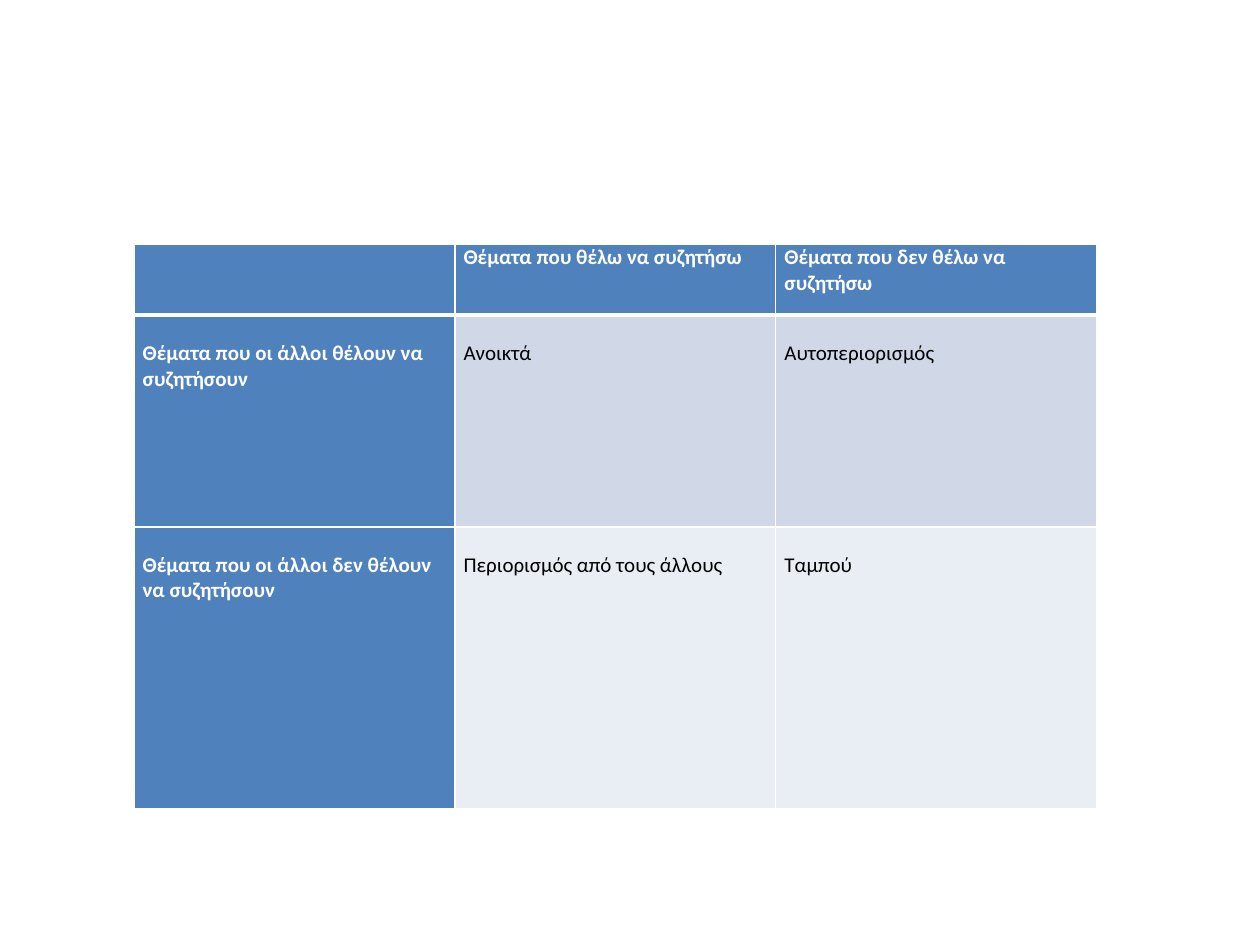
from dataclasses import dataclass

from lxml.etree import SubElement
from pptx import Presentation
from pptx.dml.color import RGBColor
from pptx.oxml.ns import qn
from pptx.util import Pt


@dataclass(frozen=True)
class Theme:
    font: str = "Calibri"
    size: float = 12
    header: str = "4F81BD"
    bands: tuple = ("D0D8E8", "E9EDF4")
    border: str = "FFFFFF"
    light: str = "FFFFFF"
    dark: str = "000000"
    thin: float = 1
    thick: float = 3


def write(tf, text, *, font, size, color, bold=False):
    p = tf.paragraphs[0]
    r = p.add_run()
    r.text = text
    r.font.name = font
    r.font.size = Pt(size)
    r.font.bold = bold
    r.font.color.rgb = RGBColor.from_string(color)


def add_border(cell, side, width, color):
    """Draw one cell edge; call in the order L, R, T, B and before the fill."""
    tc_pr = cell._tc.get_or_add_tcPr()
    ln = SubElement(tc_pr, qn(f"a:ln{side}"), w=str(Pt(width)))
    fill = SubElement(ln, qn("a:solidFill"))
    SubElement(fill, qn("a:srgbClr"), val=color)


class Deck:
    def __init__(self, theme, width, height):
        self.theme = theme
        self.prs = Presentation()
        self.prs.slide_width, self.prs.slide_height = Pt(width), Pt(height)
        self.s = self.prs.slides.add_slide(self.prs.slide_layouts[6])

    def table(self, rows, left, top, col_width, row_heights):
        n_cols = len(rows[0])
        table = self.s.shapes.add_table(
            len(rows), n_cols, Pt(left), Pt(top),
            Pt(col_width * n_cols), Pt(sum(row_heights))).table
        table.first_row = table.horz_banding = False
        for col in table.columns:
            col.width = Pt(col_width)
        for i, (texts, height) in enumerate(zip(rows, row_heights)):
            table.rows[i].height = Pt(height)
            for j, text in enumerate(texts):
                self.cell(table.cell(i, j), text, i, j)

    def cell(self, cell, text, i, j):
        t = self.theme
        heading = i == 0 or j == 0
        sides = "LRTB" if i == 0 else "LRB"
        for side in sides:
            width = t.thick if i == 0 and side == "B" else t.thin
            add_border(cell, side, width, t.border)
        cell.fill.solid()
        cell.fill.fore_color.rgb = RGBColor.from_string(
            t.header if heading else t.bands[(i - 1) % 2])
        cell.margin_left = cell.margin_right = Pt(5)
        cell.margin_top = Pt(14.65 if i else 0)  # body text starts one line down
        cell.margin_bottom = Pt(0)
        if text:
            write(cell.text_frame, text, font=t.font, size=t.size, bold=heading,
                  color=t.light if heading else t.dark)


def main():
    deck = Deck(Theme(), 720, 540)
    topics = [
        ["", "Θέματα που θέλω να συζητήσω", "Θέματα που δεν θέλω να συζητήσω"],
        ["Θέματα που οι άλλοι θέλουν να συζητήσουν", "Ανοικτά", "Αυτοπεριορισμός"],
        ["Θέματα που οι άλλοι δεν θέλουν να συζητήσουν",
         "Περιορισμός από τους άλλους", "Ταμπού"],
    ]
    deck.table(topics, left=76.5, top=139.75, col_width=183.4,
               row_heights=[40.3, 121, 161.3])
    deck.prs.save("out.pptx")


if __name__ == "__main__":
    main()
